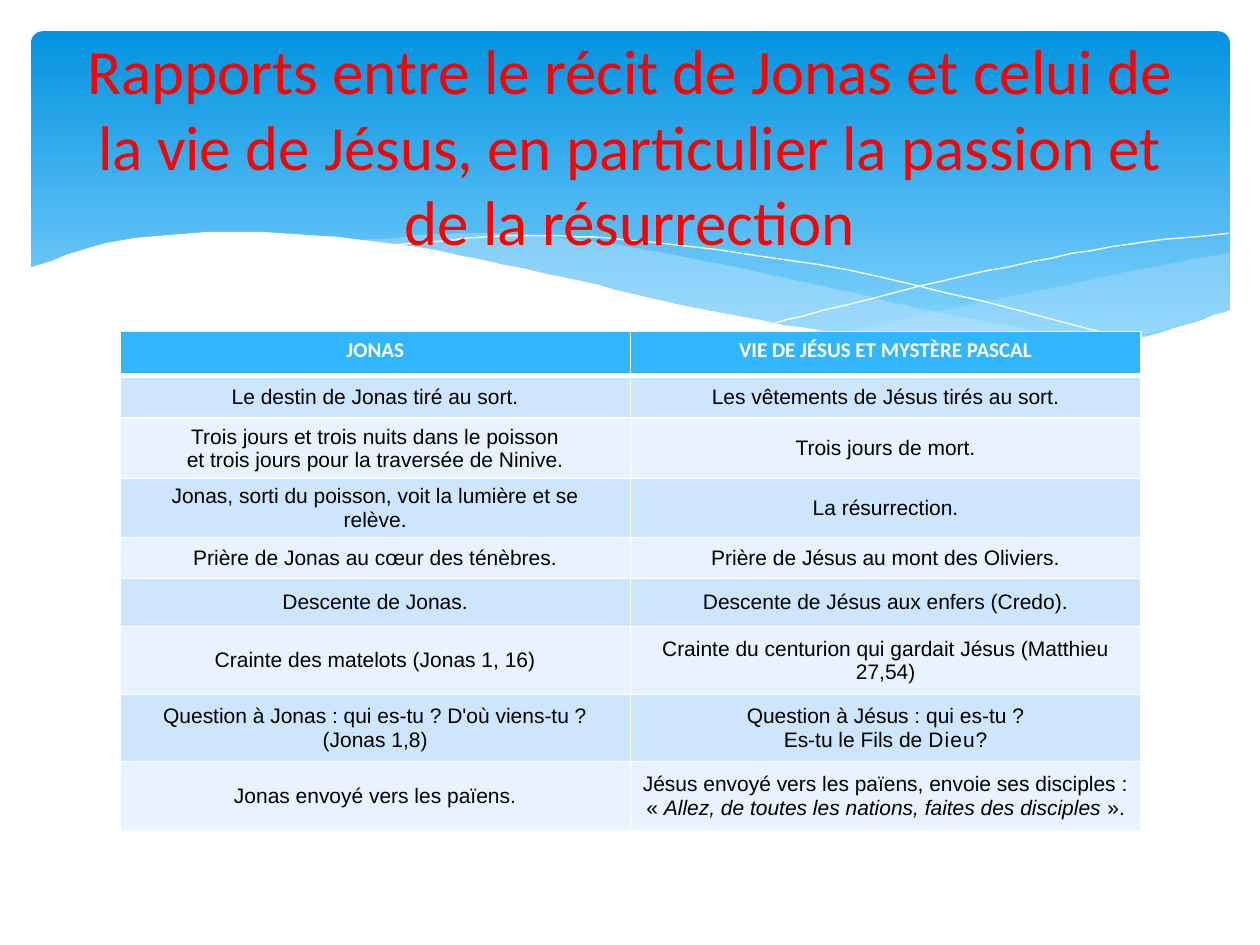
"""Build a slide comparing the story of Jonah with the life of Jesus."""
from itertools import chain
from lxml.etree import SubElement
from pptx import Presentation
from pptx.dml.color import RGBColor
from pptx.enum.shapes import MSO_SHAPE
from pptx.enum.text import MSO_ANCHOR, PP_ALIGN
from pptx.oxml import parse_xml
from pptx.oxml.ns import nsdecls, qn
from pptx.util import Cm, Pt

TITLE = ("Rapports entre le récit de Jonas et celui de la vie de Jésus, "
         "en particulier la passion et de la résurrection")
HEADINGS = ("JONAS", "VIE DE JÉSUS ET MYSTÈRE PASCAL")
PARALLELS = [
    (["Le destin de Jonas tiré au sort."], ["Les vêtements de Jésus tirés au sort."]),
    (["Trois jours et trois nuits dans le poisson",
      "et trois jours pour la traversée de Ninive."], ["Trois jours de mort."]),
    (["Jonas, sorti du poisson, voit la lumière et se", "relève."], ["La résurrection."]),
    (["Prière de Jonas au cœur des ténèbres."], ["Prière de Jésus au mont des Oliviers."]),
    (["Descente de Jonas."], ["Descente de Jésus aux enfers (Credo)."]),
    (["Crainte des matelots (Jonas 1, 16)"],
     ["Crainte du centurion qui gardait Jésus (Matthieu 27,54)"]),
    (["Question à Jonas : qui es-tu ? D'où viens-tu ?", "(Jonas 1,8)"],
     ["Question à Jésus : qui es-tu ?", [("Es-tu le Fils de ", {}), ("Dieu?", {"spacing": 60})]]),
    (["Jonas envoyé vers les païens."],
     ["Jésus envoyé vers les païens, envoie ses disciples :",
      [("« ", {}), ("Allez, de toutes les nations, faites des disciples ", {"italic": True}),
       ("».", {})]]),
]
ROW_HEIGHTS = (0.89, 0.86, 1.22, 1.19, 0.82, 0.97, 1.37, 1.35, 1.4)
COLUMN_WIDTH = 10.29
HEADER_FILL, BAND_FILLS = "31B6FD", ("CEE5FE", "E8F3FF")
TITLE_FORMAT = {"name": "Calibri", "size": Pt(36), "color": "FF0000"}
HEADER_FORMAT = {"name": "Calibri", "size": Pt(12), "color": "FFFFFF", "bold": True}
BODY_FORMAT = {"name": "Arial", "size": Pt(12), "color": "000000", "bold": False}

WAVE_UNIT = Cm(0.0254)
CURVE_STEPS = 8
WAVES = [
    {"fill": "C6E7FC", "opacity": 29, "curves": [
        [(976, 200), (861, 223), (661, 265)],
        [(661, 265), (769, 277), (863, 275), (976, 247)]]},
    {"fill": "C6E7FC", "opacity": 40, "curves": [
        [(893, 273), (775, 254), (629, 222), (489, 194), (380, 185), (286, 191)],
        [(286, 191), (404, 211), (566, 248), (722, 274), (818, 278), (893, 273)]]},
    {"line": "FFFFFF", "curves": [
        [(309, 195), (416, 187), (533, 194), (695, 219), (907, 272)]]},
    {"line": "FFFFFF", "curves": [[(613, 257), (748, 223), (881, 196), (975, 185)]]},
    {"fill": "FFFFFF", "opacity": 100, "curves": [
        [(977, 246), (899, 269), (809, 277), (688, 268), (555, 245), (447, 220),
         (316, 194), (193, 184), (95, 191), (23, 213)],
        [(23, 329), (977, 329)]]},
]


def color(value):
    return RGBColor.from_string(value)


def fill_solid(fill, value):
    fill.solid()
    fill.fore_color.rgb = color(value)


def add_text(frame, paragraphs, base_format):
    for index, content in enumerate(paragraphs):
        para = frame.paragraphs[0] if index == 0 else frame.add_paragraph()
        para.alignment = PP_ALIGN.CENTER
        spans = [(content, {})] if isinstance(content, str) else content
        for text, extra in spans:
            span = para.add_run()
            span.text = text
            for key, value in {**base_format, **extra}.items():
                if key == "color":
                    span.font.color.rgb = color(value)
                elif key == "spacing":
                    span.font._element.set("spc", str(value))
                else:
                    setattr(span.font, key, value)


def add_banner(page):
    banner = page.shapes.add_shape(
        MSO_SHAPE.ROUNDED_RECTANGLE, Cm(0.63), Cm(0.63), Cm(24.16), Cm(6.86))
    banner.adjustments[0] = 0.034
    banner.shadow.inherit = False
    banner.line.fill.background()
    banner.fill.gradient()
    banner.fill.gradient_angle = 270
    stops = ((0, "0293E0"), (0.9, "83D3FE"))
    for stop, (position, value) in zip(banner.fill.gradient_stops, stops):
        stop.position = position
        stop.color.rgb = color(value)


def spline(before, start, end, after, t):
    return (start + t * (end - before) / 2
            + t ** 2 * (2 * before - 5 * start + 4 * end - after) / 2
            + t ** 3 * (3 * start - before - 3 * end + after) / 2)


def smooth_curve(anchors):
    padded = [anchors[0], *anchors, anchors[-1]]
    points = [anchors[0]]
    for window in zip(padded, padded[1:], padded[2:], padded[3:]):
        for step in range(1, CURVE_STEPS + 1):
            points.append(tuple(spline(*axis, step / CURVE_STEPS) for axis in zip(*window)))
    return points


def add_wave(page, wave):
    start, *rest = chain.from_iterable(map(smooth_curve, wave["curves"]))
    builder = page.shapes.build_freeform(*start, scale=WAVE_UNIT)
    builder.add_line_segments(rest, close="fill" in wave)
    shape = builder.convert_to_shape()
    shape.shadow.inherit = False
    if "fill" in wave:
        shape.line.fill.background()
        fill_solid(shape.fill, wave["fill"])
        tint = shape.fill._xPr.find(qn("a:solidFill"))[0]
        SubElement(tint, qn("a:alpha"), val=str(wave["opacity"] * 1000))
    else:
        shape.fill.background()
        shape.line.width = Pt(0)
        fill_solid(shape.line.fill, wave["line"])


def set_borders(cell, widths):
    properties = cell._tc.get_or_add_tcPr()
    for index, (side, width) in enumerate(widths.items()):
        properties.insert(index, parse_xml(
            f'<a:ln{side} {nsdecls("a")} w="{Pt(width)}"><a:solidFill>'
            f'<a:srgbClr val="FFFFFF"/></a:solidFill></a:ln{side}>'))


def add_comparison(page):
    rows = [[[heading] for heading in HEADINGS], *PARALLELS]
    table = page.shapes.add_table(
        len(rows), len(HEADINGS), Cm(2.42), Cm(6.68),
        Cm(COLUMN_WIDTH * len(HEADINGS)), Cm(sum(ROW_HEIGHTS))).table
    for column in table.columns:
        column.width = Cm(COLUMN_WIDTH)
    for row_index, (contents, height) in enumerate(zip(rows, ROW_HEIGHTS)):
        table.rows[row_index].height = Cm(height)
        is_header = row_index == 0
        margins = {} if is_header else {
            "vertical_anchor": MSO_ANCHOR.MIDDLE, "margin_left": Cm(0.08),
            "margin_right": Cm(0.08), "margin_top": 0, "margin_bottom": 0}
        for column_index, paragraphs in enumerate(contents):
            cell = table.cell(row_index, column_index)
            for key, value in margins.items():
                setattr(cell, key, value)
            fill_solid(cell.fill, HEADER_FILL if is_header else BAND_FILLS[(row_index - 1) % 2])
            set_borders(cell, {"L": 1, "R": 1, "T": 3 if row_index == 1 else 1,
                               "B": 3 if is_header else 1})
            add_text(cell.text_frame, paragraphs, HEADER_FORMAT if is_header else BODY_FORMAT)


def add_title(page):
    box = page.shapes.add_textbox(Cm(1.27), Cm(1.42), Cm(22.86), Cm(3))
    box.text_frame.word_wrap = True
    box.text_frame.vertical_anchor = MSO_ANCHOR.MIDDLE
    add_text(box.text_frame, [TITLE], TITLE_FORMAT)


def main():
    deck = Presentation()
    deck.slide_width, deck.slide_height = Cm(25.4), Cm(19.05)
    page = deck.slides.add_slide(deck.slide_layouts[6])
    add_banner(page)
    for wave in WAVES:
        add_wave(page, wave)
    add_comparison(page)
    add_title(page)
    deck.save("out.pptx")


if __name__ == "__main__":
    main()
